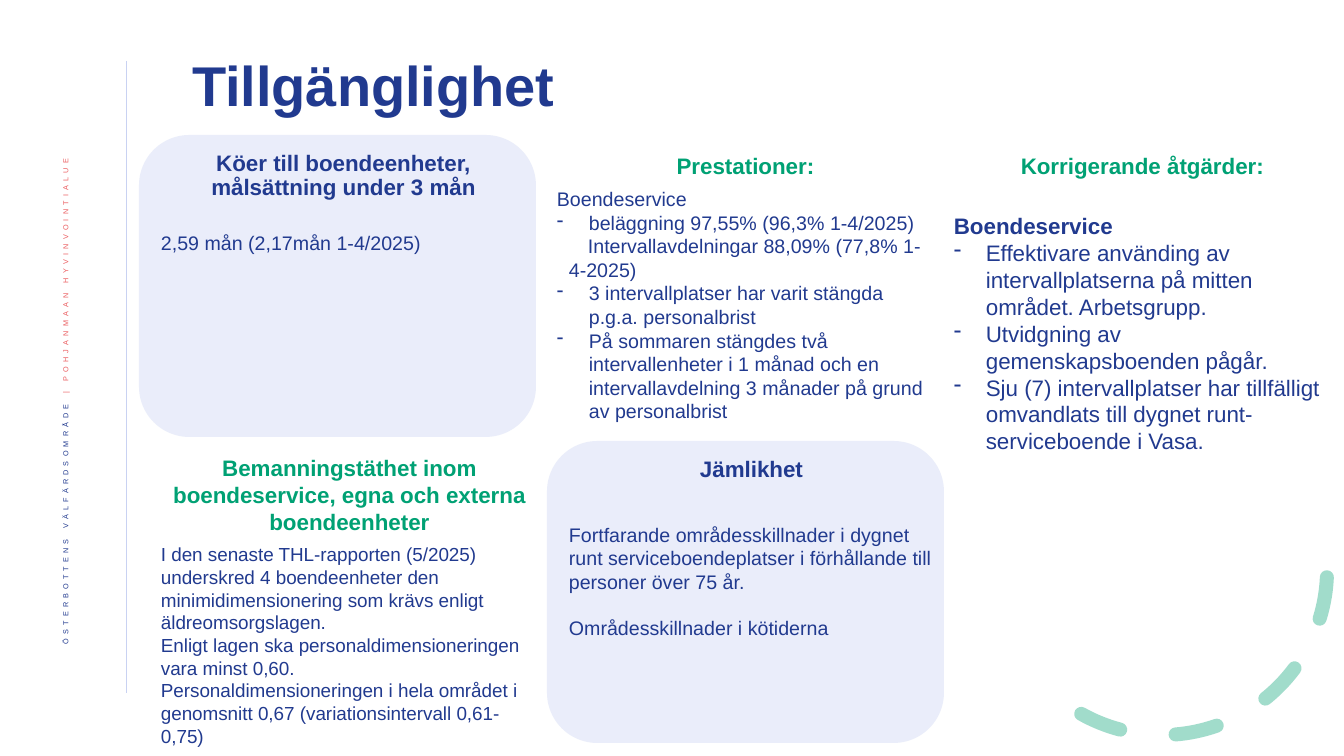
from dataclasses import dataclass
from pptx import Presentation
from pptx.dml.color import RGBColor
from pptx.enum.dml import MSO_LINE
from pptx.enum.shapes import MSO_CONNECTOR, MSO_SHAPE
from pptx.enum.text import MSO_ANCHOR, MSO_AUTO_SIZE, PP_ALIGN
from pptx.oxml.ns import qn
from pptx.util import Pt
from lxml.etree import SubElement

EMU_PER_PX = 914400 / 100.8


@dataclass(frozen=True)
class Theme:
    """Colours, font and type sizes of the slide."""
    navy: RGBColor = RGBColor(0x21, 0x3A, 0x8F)
    green: RGBColor = RGBColor(0x00, 0xA1, 0x74)
    coral: RGBColor = RGBColor(0xEB, 0x5C, 0x5F)
    lavender: RGBColor = RGBColor(0xC9, 0xD2, 0xF2)
    font: str = "Arial"
    title: float = 40
    heading: float = 16
    body: float = 14
    dense: float = 13.5
    sidebar: float = 9


@dataclass(frozen=True)
class Item:
    """One body paragraph with its gap above (pt) and its indents (px)."""
    text: str
    before: float = 0
    bold: bool = False
    dash: bool = False
    left: int = 0
    first: int = 0


THEME = Theme()


def dashed(text):
    """Return a list item with a hanging dash."""
    return Item(text, dash=True, left=32, first=-32)


def px(length):
    """Turn pixels into EMU."""
    return round(length * EMU_PER_PX)


def place(box):
    """Turn a pixel box into EMU coordinates."""
    return [px(length) for length in box]


def style_run(run, size, color, bold=False):
    """Give a run its font, size, colour and weight."""
    run.font.name = THEME.font
    run.font.size = Pt(size)
    run.font.bold = bold
    run.font.color.rgb = color


def fade(shape, percent):
    """Set the opacity of the shape's colours."""
    for color in shape._element.spPr.iter(qn("a:srgbClr")):
        SubElement(color, qn("a:alpha"), val=str(percent * 1000))


def add_title(slide, box, text):
    """Place and format the slide title."""
    title = slide.shapes.title
    title.left, title.top, title.width, title.height = place(box)
    frame = title.text_frame
    frame.text = text
    frame.vertical_anchor = MSO_ANCHOR.MIDDLE
    paragraph = frame.paragraphs[0]
    paragraph.alignment = PP_ALIGN.LEFT
    paragraph.line_spacing = 0.9
    style_run(paragraph.runs[0], THEME.title, THEME.navy, True)


def add_sidebar(slide, box, rule_x, rule_top, rule_bottom):
    """Draw the upright organisation line and the thin rule beside it."""
    rule = slide.shapes.add_connector(
        MSO_CONNECTOR.STRAIGHT, *place((rule_x, rule_top, rule_x, rule_bottom)))
    rule.line.color.rgb = THEME.lavender
    rule.line.width = Pt(0.5)
    SubElement(rule._element.spPr, qn("a:effectLst"))
    frame = slide.shapes.add_textbox(*place(box)).text_frame
    frame.word_wrap = True
    frame.vertical_anchor = MSO_ANCHOR.MIDDLE
    frame._txBody.bodyPr.set("vert", "vert270")
    paragraph = frame.paragraphs[0]
    paragraph.alignment = PP_ALIGN.RIGHT
    paragraph.line_spacing = 0.9
    for name, color in (("ÖSTERBOTTENS VÄLFÄRDSOMRÅDE ", THEME.navy),
                        ("| POHJANMAAN HYVINVOINTIALUE ", THEME.coral)):
        run = paragraph.add_run()
        run.text = name
        style_run(run, THEME.sidebar, color)
        properties = run._r.get_or_add_rPr()
        properties.set("baseline", "30000")
        properties.set("spc", "300")


def add_arc(slide, box):
    """Draw the dashed arc in the corner."""
    arc = slide.shapes.add_shape(MSO_SHAPE.ARC, *place(box))
    arc.shadow.inherit = False
    arc.adjustments[0], arc.adjustments[1] = 158.17, 17.81
    arc.rotation = 98.9
    arc.fill.background()
    arc.line.color.rgb = THEME.green
    arc.line.width = Pt(10)
    arc.line.dash_style = MSO_LINE.DASH
    arc.line._ln.set("cap", "rnd")
    fade(arc, 36)


def add_item(frame, item, size):
    """Append one body paragraph."""
    paragraph = frame.add_paragraph()
    paragraph.text = item.text
    paragraph.space_before = Pt(item.before)
    properties = paragraph._p.get_or_add_pPr()
    properties.set("marL", str(px(item.left)))
    properties.set("indent", str(px(item.first)))
    if item.dash:
        SubElement(properties, qn("a:buChar"), char="-")
    style_run(paragraph.runs[0], size, THEME.navy, item.bold)


def add_section(slide, box, heading, items, size, color=THEME.green, spacing=1.0):
    """Write a centred heading and its body paragraphs in a box."""
    frame = slide.shapes.add_textbox(*place(box)).text_frame
    frame.word_wrap = True
    frame.auto_size = MSO_AUTO_SIZE.SHAPE_TO_FIT_TEXT
    frame.text = heading
    paragraph = frame.paragraphs[0]
    paragraph.alignment = PP_ALIGN.CENTER
    paragraph.line_spacing = spacing
    paragraph.space_after = Pt(6)
    style_run(paragraph.runs[0], THEME.heading, color, True)
    for item in items:
        add_item(frame, item, size)


def add_card(slide, box, heading, items, text_height):
    """Draw a rounded card with a section inset in it."""
    card = slide.shapes.add_shape(MSO_SHAPE.ROUNDED_RECTANGLE, *place(box))
    card.shadow.inherit = False
    card.fill.solid()
    card.fill.fore_color.rgb = THEME.lavender
    card.line.fill.background()
    fade(card, 38)
    left, top, width, _ = box
    inset = 12
    add_section(slide, (left + inset, top + inset, width - inset, text_height),
                heading, items, THEME.body, THEME.navy, 0.9)


def main():
    """Build the slide and save it."""
    deck = Presentation()
    deck.slide_width, deck.slide_height = px(1344), px(756)
    slide = deck.slides.add_slide(deck.slide_layouts[5])
    add_sidebar(slide, (42, 143, 52, 578), 126, 61, 693)
    add_arc(slide, (997, 405, 330, 330))
    add_title(slide, (182, 45, 1028, 86), "Tillgänglighet")
    add_card(slide, (139, 135, 397, 302),
             "Köer till boendeenheter, målsättning under 3 mån",
             [Item("2,59 mån (2,17mån 1-4/2025)", before=16)], 115)
    add_section(slide, (547, 147, 397, 283), "Prestationer:", [
        Item("Boendeservice"),
        dashed("beläggning 97,55% (96,3% 1-4/2025)"),
        Item("Intervallavdelningar 88,09% (77,8% 1- 4-2025)", left=12, first=19),
        dashed("3 intervallplatser har varit stängda p.g.a. personalbrist"),
        dashed("På sommaren stängdes två intervallenheter i 1 månad och en "
               "intervallavdelning 3 månader på grund av personalbrist"),
    ], THEME.body)
    add_section(slide, (944, 147, 397, 375), "Korrigerande åtgärder:", [
        Item("Boendeservice", before=18, bold=True),
        dashed("Effektivare använding av intervallplatserna på mitten området. "
               "Arbetsgrupp."),
        dashed("Utvidgning av gemenskapsboenden pågår."),
        dashed("Sju (7) intervallplatser har tillfälligt omvandlats till dygnet "
               "runt-serviceboende i Vasa."),
    ], THEME.heading)
    add_card(slide, (547, 441, 397, 302), "Jämlikhet", [
        Item("Fortfarande områdesskillnader i dygnet runt serviceboendeplatser "
             "i förhållande till personer över 75 år.", before=23),
        Item("Områdesskillnader i kötiderna", before=16),
    ], 195)
    add_section(slide, (151, 449, 397, 330),
                "Bemanningstäthet inom boendeservice, egna och externa boendeenheter", [
        Item("I den senaste THL-rapporten (5/2025) underskred 4 boendeenheter den "
             "minimidimensionering som krävs enligt äldreomsorgslagen."),
        Item("Enligt lagen ska personaldimensioneringen vara minst 0,60."),
        Item("Personaldimensioneringen i hela området i genomsnitt 0,67 "
             "(variationsintervall 0,61-0,75)"),
    ], THEME.dense)
    deck.save("out.pptx")


if __name__ == "__main__":
    main()
